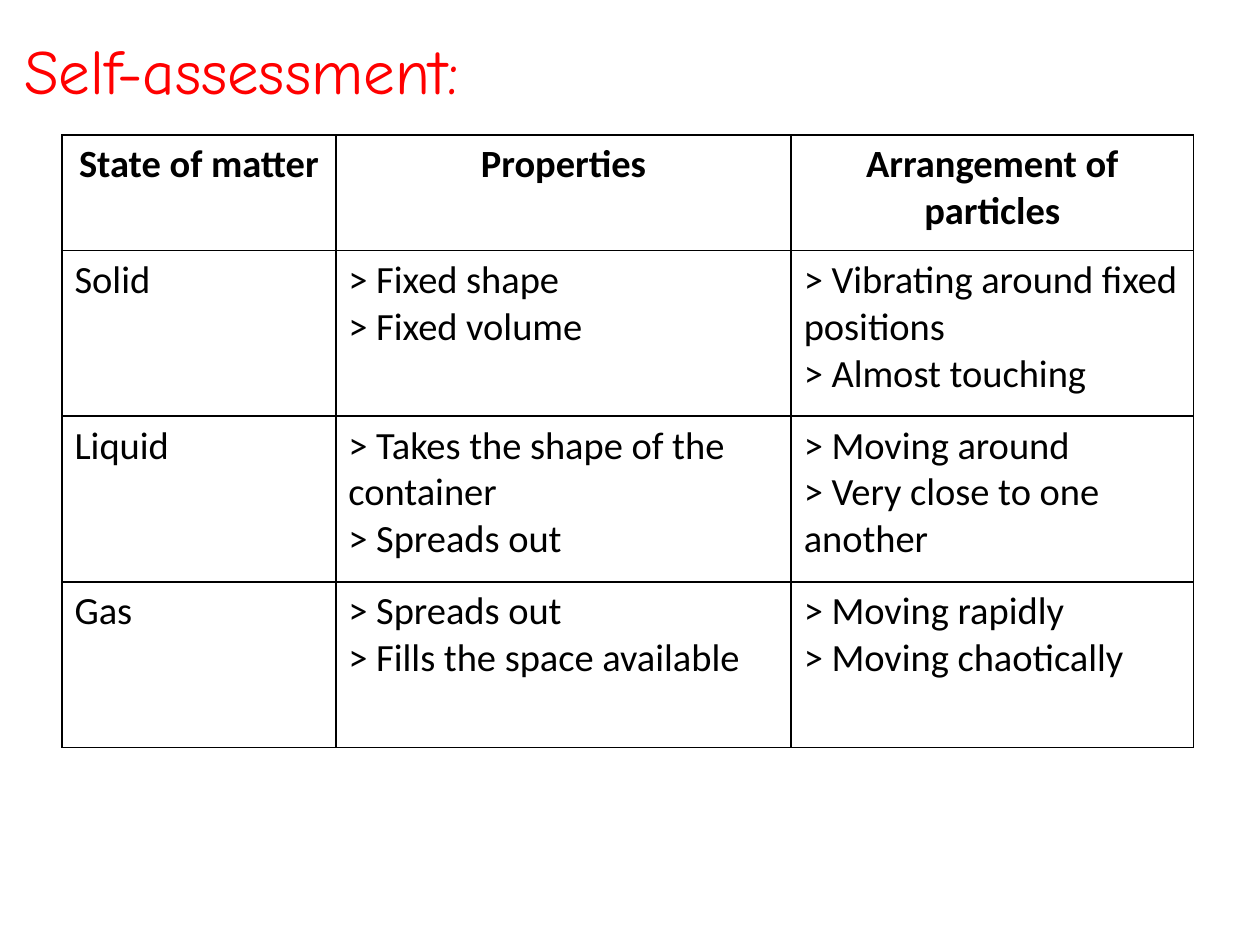
from lxml import etree
from pptx import Presentation
from pptx import util as u
from pptx.dml.color import RGBColor
from pptx.enum import text
from pptx.oxml import ns


def write(para, words, font, size, color, bold=False):
    span = para.add_run()
    span.text = words
    span.font.name = font
    span.font.size = u.Pt(size)
    span.font.bold = bold
    span.font.color.rgb = RGBColor.from_string(color)


def add_borders(cell, color, width):
    """Draw all four edges; their elements must precede the cell fill."""
    props = cell._tc.get_or_add_tcPr()
    for position, edge in enumerate(("lnL", "lnR", "lnT", "lnB")):
        line = etree.Element(ns.qn(f"a:{edge}"), w=str(u.Pt(width)))
        fill = etree.SubElement(line, ns.qn("a:solidFill"))
        etree.SubElement(fill, ns.qn("a:srgbClr"), val=color)
        props.insert(position, line)


deck = Presentation()
deck.slide_width, deck.slide_height = u.Cm(25.4), u.Cm(19.05)
page = deck.slides.add_slide(deck.slide_layouts[5])

title = page.shapes.title
title.left, title.top = u.Cm(0.23), u.Cm(0.51)
title.width, title.height = u.Cm(11.3), u.Cm(1.8)
title.text_frame.word_wrap = True
title.text_frame.auto_size = text.MSO_AUTO_SIZE.NONE
title.text_frame.vertical_anchor = text.MSO_ANCHOR.TOP
heading = title.text_frame.paragraphs[0]
heading.alignment = text.PP_ALIGN.LEFT
write(heading, "Self-assessment:", "Comic Neue", 36, "FF0000")

# Each cell is a list of paragraphs.
rows = [
    [["State of matter"], ["Properties"], ["Arrangement of particles"]],
    [["Solid"],
     ["> Fixed shape", "> Fixed volume"],
     ["> Vibrating around fixed positions", "> Almost touching"]],
    [["Liquid"],
     ["> Takes the shape of the container", "> Spreads out"],
     ["> Moving around", "> Very close to one another"]],
    [["Gas"],
     ["> Spreads out", "> Fills the space available"],
     ["> Moving rapidly", "> Moving chaotically"]],
]
column_widths = [5.52, 9.18, 8.11]
row_heights = [2.33, 3.34, 3.34, 3.34]

states = page.shapes.add_table(
    len(rows), len(column_widths), u.Cm(1.25), u.Cm(2.72),
    u.Cm(sum(column_widths)), u.Cm(sum(row_heights))).table
for column, width in zip(states.columns, column_widths):
    column.width = u.Cm(width)
for row, height in zip(states.rows, row_heights):
    row.height = u.Cm(height)

for r, row in enumerate(rows):
    is_header = r == 0
    for c, lines in enumerate(row):
        cell = states.cell(r, c)
        cell.fill.background()
        add_borders(cell, "000000", 1)
        for i, words in enumerate(lines):
            frame = cell.text_frame
            para = frame.add_paragraph() if i else frame.paragraphs[0]
            para.alignment = text.PP_ALIGN.CENTER if is_header else text.PP_ALIGN.LEFT
            write(para, words, "Calibri", 22, "000000", is_header)

deck.save("out.pptx")
